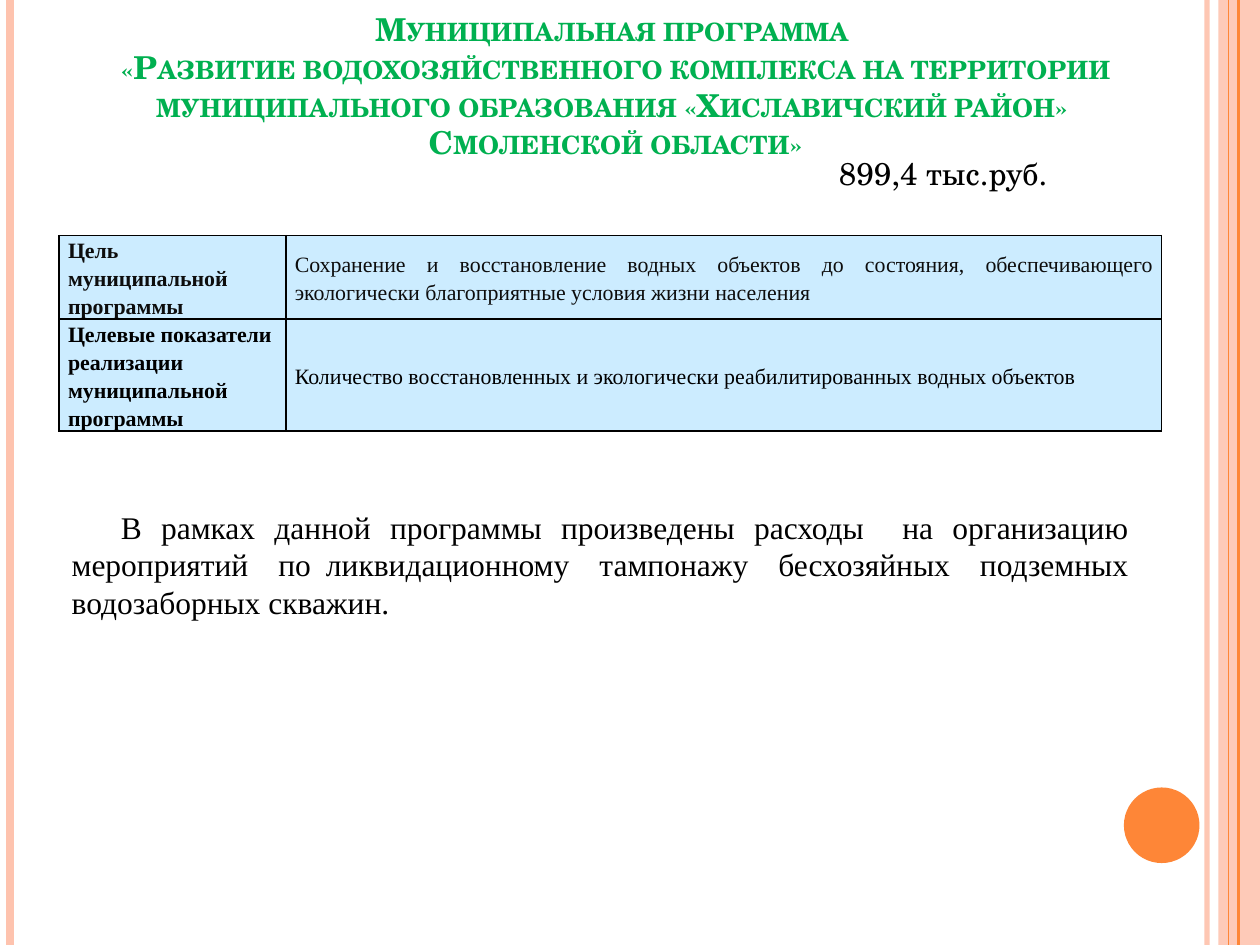
"""Build the slide on the municipal water management programme."""
from lxml.etree import SubElement
from pptx import Presentation
from pptx.dml.color import RGBColor
from pptx.enum.shapes import MSO_CONNECTOR, MSO_SHAPE
from pptx.enum.text import MSO_ANCHOR, MSO_AUTO_SIZE, PP_ALIGN
from pptx.oxml.ns import qn
from pptx.util import Inches, Pt

PEACH = RGBColor(0xFE, 0xC3, 0xAE)
ORANGE = RGBColor(0xFE, 0x86, 0x37)
GREEN = RGBColor(0x00, 0xB0, 0x50)
PALE_BLUE = RGBColor(0xCC, 0xEC, 0xFF)
NEAR_BLACK = RGBColor(0x0D, 0x0D, 0x0D)
BLACK = RGBColor(0x00, 0x00, 0x00)
HEADING_FONT = "TeX Gyre Schola"
BODY_FONT = "Times New Roman"


def format_text(frame, font, size, color, bold=False, align=PP_ALIGN.LEFT):
    frame.word_wrap = True
    for paragraph in frame.paragraphs:
        paragraph.alignment = align
        for span in paragraph.runs:
            span.font.name = font
            span.font.size = Pt(size)
            span.font.color.rgb = color
            span.font.bold = bold


def set_opacity(element, percent):
    color = next(element.iter(qn("a:srgbClr")))
    SubElement(color, qn("a:alpha")).set("val", str(percent * 1000))


deck = Presentation()
deck.slide_width, deck.slide_height = Inches(10), Inches(7.5)
page = deck.slides.add_slide(deck.slide_layouts[5])

band = page.shapes.add_shape(MSO_SHAPE.RECTANGLE, Inches(9.67), 0, Inches(0.33), Inches(7.5))
circle = page.shapes.add_shape(
    MSO_SHAPE.OVAL, Inches(8.92), Inches(6.25), Inches(0.6), Inches(0.6)
)
for shape, color in ((band, PEACH), (circle, ORANGE)):
    shape.shadow.inherit = False
    shape.fill.solid()
    shape.fill.fore_color.rgb = color
    shape.line.fill.background()
set_opacity(band.fill._xPr, 87)

for x, color, width, opacity in (
    (9.58, PEACH, 3, 93),
    (0.08, PEACH, 4.5, 100),
    (9.83, ORANGE, 1.5, 100),
    (9.75, ORANGE, 0.75, 100),
):
    stripe = page.shapes.add_connector(
        MSO_CONNECTOR.STRAIGHT, Inches(x), 0, Inches(x), Inches(7.5)
    )
    stripe.line.color.rgb = color
    stripe.line.width = Pt(width)
    properties = stripe._element.spPr
    if opacity < 100:
        set_opacity(properties, opacity)
    SubElement(properties, qn("a:effectLst"))

title = page.shapes.title
title.left, title.top = Inches(0.47), Inches(0.31)
title.width, title.height = Inches(8.83), Inches(1.02)
frame = title.text_frame
frame.text = (
    "Муниципальная программа \v«Развитие водохозяйственного комплекса на территории "
    "муниципального образования «Хиславичский район»  Смоленской области»"
)
frame.auto_size = MSO_AUTO_SIZE.NONE
frame.vertical_anchor = MSO_ANCHOR.BOTTOM
format_text(frame, HEADING_FONT, 18, GREEN, True, PP_ALIGN.CENTER)
for span in frame.paragraphs[0].runs:
    span.font._element.set("cap", "small")

goals = (
    (
        "Цель муниципальной программы",
        "Сохранение и восстановление водных объектов до состояния, обеспечивающего "
        "экологически благоприятные условия жизни населения",
    ),
    (
        "Целевые показатели реализации муниципальной программы",
        "Количество восстановленных и экологически реабилитированных водных объектов",
    ),
)
table = page.shapes.add_table(
    2, 2, Inches(0.47), Inches(1.87), Inches(8.75), Inches(1.55)
).table
for column, width in zip(table.columns, (1.8, 6.95)):
    column.width = Inches(width)
for row, height in zip(table.rows, (0.66, 0.89)):
    row.height = Inches(height)
for row_index, texts in enumerate(goals):
    for column_index, text in enumerate(texts):
        cell = table.cell(row_index, column_index)
        cell.text_frame.text = text
        cell.margin_left = cell.margin_right = Inches(0.07)
        cell.margin_top = cell.margin_bottom = 0
        cell.vertical_anchor = MSO_ANCHOR.MIDDLE
        format_text(
            cell.text_frame,
            BODY_FONT,
            12.5,
            BLACK if row_index else NEAR_BLACK,
            column_index == 0,
            PP_ALIGN.JUSTIFY if column_index else PP_ALIGN.LEFT,
        )
        cell.text_frame.paragraphs[0].line_spacing = 1.15
        properties = cell._tc.get_or_add_tcPr()
        for side in ("a:lnL", "a:lnR", "a:lnT", "a:lnB"):
            border = SubElement(properties, qn(side), w=str(Pt(1)))
            fill = SubElement(border, qn("a:solidFill"))
            SubElement(fill, qn("a:srgbClr"), val=str(BLACK))
        cell.fill.solid()
        cell.fill.fore_color.rgb = PALE_BLUE

box = page.shapes.add_textbox(Inches(0.47), Inches(3.98), Inches(8.59), Inches(1.01))
box.text_frame.text = (
    "В рамках данной программы произведены расходы  на организацию мероприятий  по "
    "ликвидационному  тампонажу  бесхозяйных  подземных водозаборных скважин. "
)
format_text(box.text_frame, BODY_FONT, 18, BLACK, align=PP_ALIGN.JUSTIFY)
box.text_frame.paragraphs[0]._p.get_or_add_pPr().set("indent", str(Inches(0.39)))

amount = page.shapes.add_textbox(Inches(6.56), Inches(1.17), Inches(2.42), Inches(0.4))
amount.text_frame.text = "899,4 тыс.руб."
format_text(amount.text_frame, HEADING_FONT, 18, BLACK)

deck.save("out.pptx")
